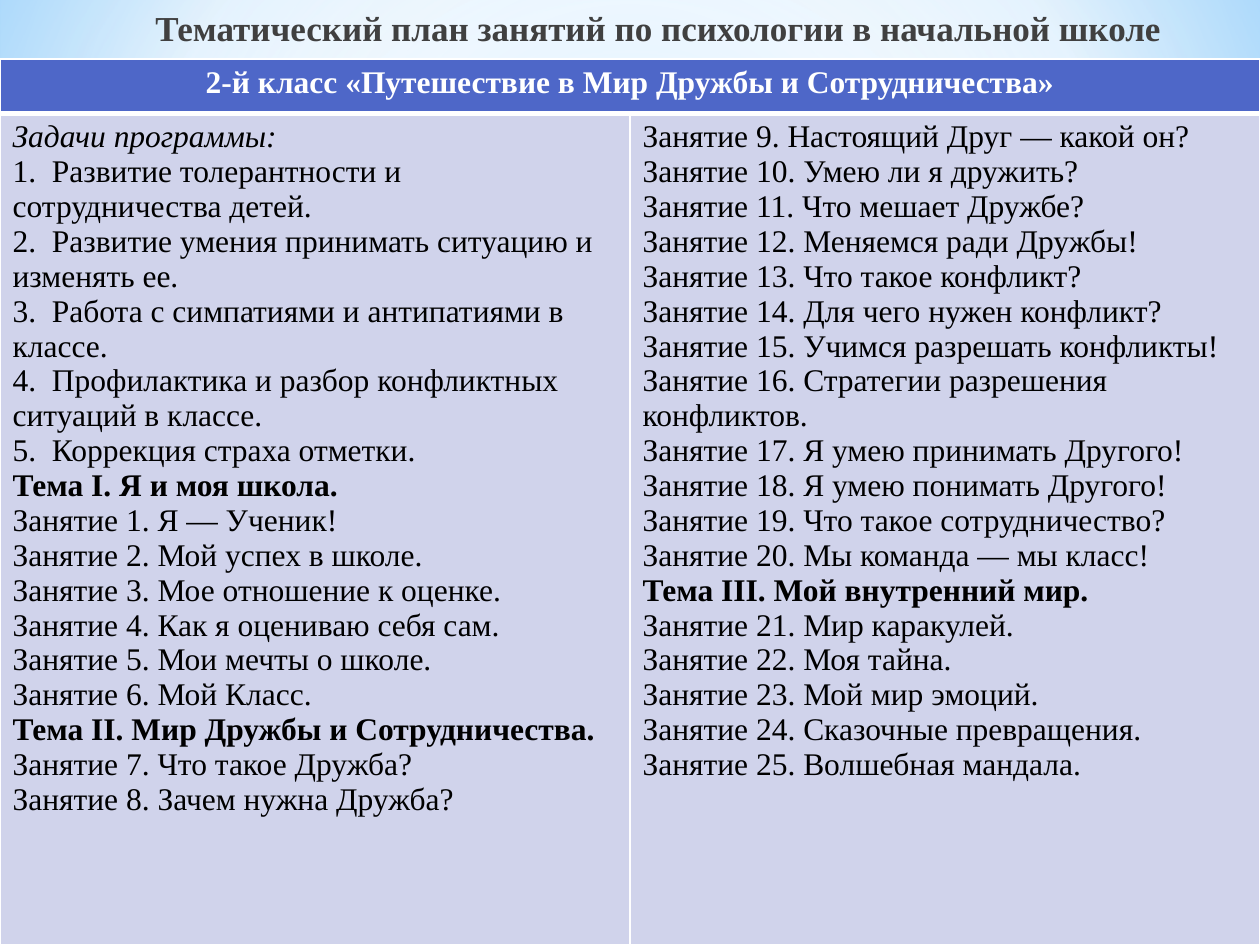
from dataclasses import dataclass

from lxml.etree import SubElement
from pptx import Presentation
from pptx.dml.color import RGBColor
from pptx.enum.shapes import MSO_SHAPE as Shape
from pptx.enum.text import PP_ALIGN as Align
from pptx.oxml.ns import qn
from pptx.util import Emu, Inches, Pt


@dataclass(frozen=True)
class Theme:
    font: str = "Times New Roman"
    title_size: int = 20
    table_size: int = 18
    title: str = "404040"
    header: str = "4E67C8"
    body: str = "D0D3EB"
    light: str = "FFFFFF"
    dark: str = "000000"
    sky: tuple = ((0, "9ED5FF", 100), (60, "FFFFFF", 100), (100, "5BB9FF", 100))
    veil: tuple = ((0, "FFFFFF", 89), (48, "FFFFFF", 62), (100, "B4DCFA", 79))


class SlideBuilder:
    def __init__(self, deck, theme):
        self.deck = deck
        self.theme = theme
        self.page = deck.slides.add_slide(deck.slide_layouts[6])

    def area(self, left, top, width, height):
        wide, high = self.deck.slide_width, self.deck.slide_height
        return [Emu(round(share * side)) for share, side in
                zip((left, top, width, height), (wide, high, wide, high))]

    def radial(self, fill, element, stops, focus):
        fill.gradient()
        gradient = element.find(".//" + qn("a:gradFill"))
        for child in list(gradient):
            gradient.remove(child)
        stop_list = SubElement(gradient, qn("a:gsLst"))
        for position, color, opacity in stops:
            stop = SubElement(stop_list, qn("a:gs"), pos=str(position * 1000))
            tint = SubElement(stop, qn("a:srgbClr"), val=color)
            if opacity < 100:
                SubElement(tint, qn("a:alpha"), val=str(opacity * 1000))
        circle = SubElement(gradient, qn("a:path"), {"path": "circle"})
        edges = {side: str(share * 1000) for side, share in zip("ltrb", focus)}
        SubElement(circle, qn("a:fillToRect"), edges)

    def background(self, stops, focus):
        self.radial(self.page.background.fill, self.page.element, stops, focus)

    def veil(self, area, stops, focus):
        shape = self.page.shapes.add_shape(Shape.RECTANGLE, *self.area(*area))
        shape.shadow.inherit = False
        shape.line.fill.background()
        self.radial(shape.fill, shape.element, stops, focus)

    def style_text(self, para, text, size, color, bold=False, italic=False):
        para.text = text
        font = para.font
        font.name, font.size = self.theme.font, Pt(size)
        font.bold, font.italic = bold, italic
        font.color.rgb = RGBColor.from_string(color)

    def title(self, area, text):
        box = self.page.shapes.add_textbox(*self.area(*area))
        box.text_frame.word_wrap = True
        para = box.text_frame.paragraphs[0]
        self.style_text(para, text, self.theme.title_size, self.theme.title, bold=True)
        para.alignment = Align.CENTER
        para.space_before, para.space_after = Pt(2), Pt(3)
        properties = para._p.get_or_add_pPr()
        properties.set("marL", str(Inches(0.25)))
        properties.set("indent", str(Inches(0.2)))

    def paint_cell(self, cell, color, bottom):
        properties = cell._tc.get_or_add_tcPr()
        for side, width in (("L", 1), ("R", 1), ("T", 1), ("B", bottom)):
            line = SubElement(properties, qn(f"a:ln{side}"), w=str(Pt(width)))
            fill = SubElement(line, qn("a:solidFill"))
            SubElement(fill, qn("a:srgbClr"), val=self.theme.light)
        cell.fill.solid()
        cell.fill.fore_color.rgb = RGBColor.from_string(color)

    def table(self, area, header, columns, row_heights):
        theme = self.theme
        frame = self.page.shapes.add_table(2, len(columns), *self.area(*area))
        table = frame.table
        for row, height in zip(table.rows, row_heights):
            row.height = Emu(round(height * self.deck.slide_height))
        for index, lines in enumerate(columns):
            self.paint_cell(table.cell(0, index), theme.header, 3)
            cell = table.cell(1, index)
            self.paint_cell(cell, theme.body, 1)
            cell.text = "\n".join(lines)
            for para, line in zip(cell.text_frame.paragraphs, lines):
                self.style_text(para, line, theme.table_size, theme.dark,
                                bold=line.startswith("Тема"),
                                italic=line.startswith("Задачи"))
        head = table.cell(0, 0)
        head.merge(table.cell(0, len(columns) - 1))
        para = head.text_frame.paragraphs[0]
        self.style_text(para, header, theme.table_size, theme.light, bold=True)
        para.alignment = Align.CENTER


TASKS = [
    "Развитие толерантности и сотрудничества детей.",
    "Развитие умения принимать ситуацию и изменять ее.",
    "Работа с симпатиями и антипатиями в классе.",
    "Профилактика и разбор конфликтных ситуаций в классе.",
    "Коррекция страха отметки.",
]
LESSONS = [
    "Я — Ученик!",
    "Мой успех в школе.",
    "Мое отношение к оценке.",
    "Как я оцениваю себя сам.",
    "Мои мечты о школе.",
    "Мой Класс.",
    "Что такое Дружба?",
    "Зачем нужна Дружба?",
    "Настоящий Друг — какой он?",
    "Умею ли я дружить?",
    "Что мешает Дружбе?",
    "Меняемся ради Дружбы!",
    "Что такое конфликт?",
    "Для чего нужен конфликт?",
    "Учимся разрешать конфликты!",
    "Стратегии разрешения конфликтов.",
    "Я умею принимать Другого!",
    "Я умею понимать Другого!",
    "Что такое сотрудничество?",
    "Мы команда — мы класс!",
    "Мир каракулей.",
    "Моя тайна.",
    "Мой мир эмоций.",
    "Сказочные превращения.",
    "Волшебная мандала.",
]


def lessons(first, last):
    return [f"Занятие {number}. {LESSONS[number - 1]}"
            for number in range(first, last + 1)]


def main():
    deck = Presentation()
    deck.slide_width, deck.slide_height = Inches(10), Inches(7.5)
    theme = Theme()
    slide = SlideBuilder(deck, theme)
    slide.background(theme.sky, (20, 10, 20, 60))
    slide.veil((0, 0, 1, 0.74), theme.veil, (50, 50, 50, 50))
    slide.title((0.03, 0, 0.94, 1),
                "Тематический план занятий по психологии в начальной школе")
    left = [
        "Задачи программы:",
        *(f"{number}.  {task}" for number, task in enumerate(TASKS, 1)),
        "Тема I. Я и моя школа.",
        *lessons(1, 6),
        "Тема II. Мир Дружбы и Сотрудничества.",
        *lessons(7, 8),
    ]
    right = [*lessons(9, 20), "Тема III. Мой внутренний мир.", *lessons(21, 25)]
    top, header_height = 0.47 / 7.5, 0.43 / 7.5
    slide.table((0, top, 1, 1 - top),
                "2-й класс «Путешествие в Мир Дружбы и Сотрудничества»",
                (left, right), (header_height, 1 - top - header_height))
    deck.save("out.pptx")


if __name__ == "__main__":
    main()
